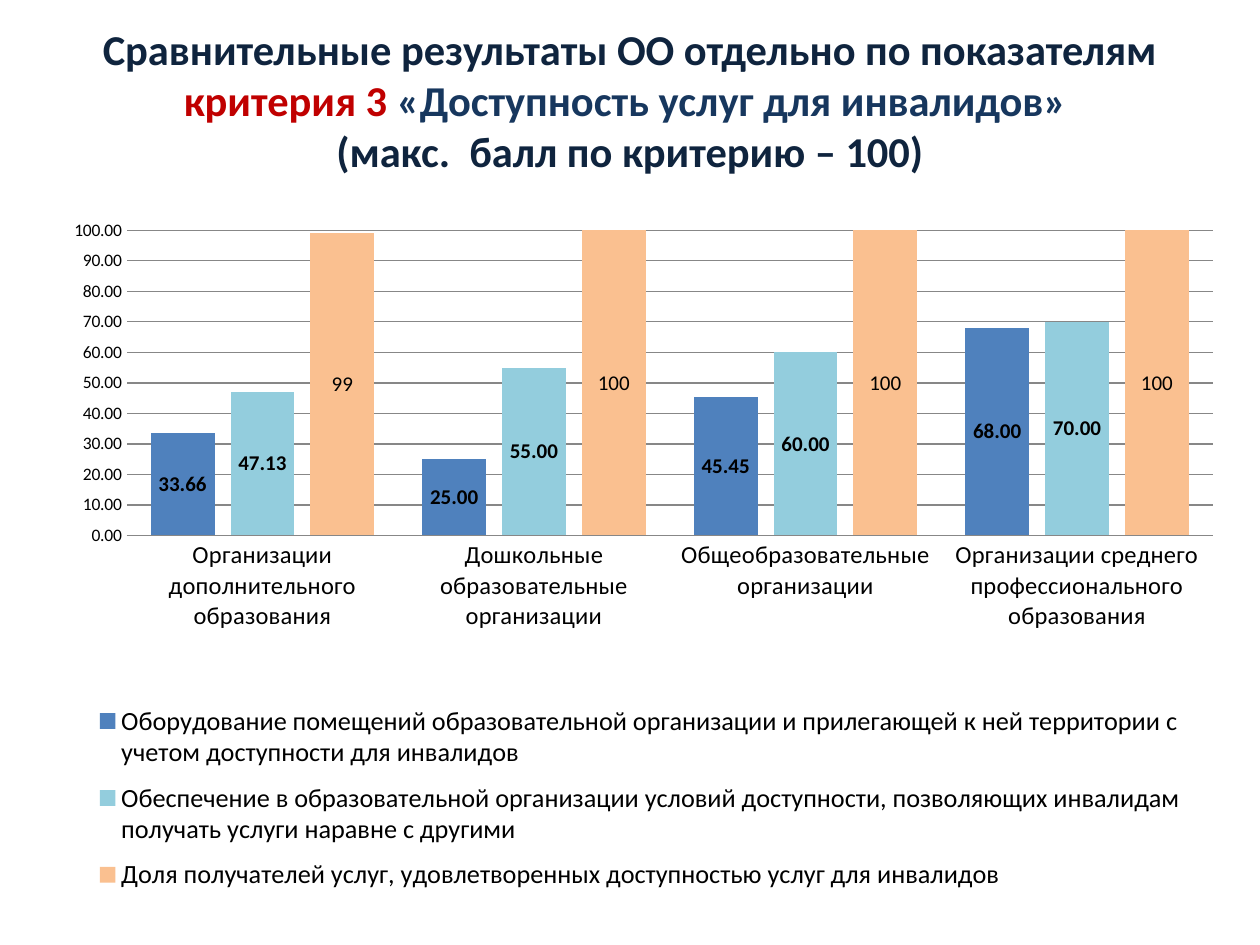
import pptx
import pptx.util
import pptx.chart.data
import pptx.dml.color
import pptx.enum.chart
import pptx.enum.text
import pptx.oxml
import pptx.oxml.ns
from dataclasses import dataclass

Pt = pptx.util.Pt
RGB = pptx.dml.color.RGBColor.from_string
qn = pptx.oxml.ns.qn


@dataclass(frozen=True)
class Theme:
    font: str = "Calibri"
    black: str = "000000"
    navy: str = "0F243E"
    blue: str = "17375E"
    red: str = "C00000"
    grid: str = "878787"
    bars: tuple = ("4F81BD", "93CDDD", "FAC090")
    title: float = 24.3
    scale: float = 10
    label: float = 12
    group: float = 14
    key: float = 15
    number: str = "0.00;[Red]0.00"


class Deck:
    def __init__(self, theme):
        self.theme = theme
        self.file = pptx.Presentation()
        self.file.slide_width, self.file.slide_height = Pt(720), Pt(540)
        self.slide = self.file.slides.add_slide(self.file.slide_layouts[6])

    def style(self, font, size, color, bold=False):
        font.name, font.size, font.bold = self.theme.font, Pt(size), bold
        font.color.rgb = RGB(color)

    def title(self, box, lines):
        frame = self.slide.shapes.add_textbox(*map(Pt, box)).text_frame
        frame.word_wrap = True
        frame.vertical_anchor = pptx.enum.text.MSO_ANCHOR.MIDDLE
        para = frame.paragraphs[0]
        para.alignment = pptx.enum.text.PP_ALIGN.CENTER
        for row, line in enumerate(lines):
            if row:
                para.add_line_break()
            for text, color in line:
                run = para.add_run()
                run.text = text
                self.style(run.font, self.theme.title, color, True)

    def layout(self, part, spot, inner=False):
        """Place a chart part by fractions of the chart area."""
        old = part.find(qn("c:layout"))
        if old is not None:
            part.remove(old)
        target = '<c:layoutTarget val="inner"/>' if inner else ""
        modes = '<c:xMode val="edge"/><c:yMode val="edge"/>'
        sizes = "".join(f'<c:{n} val="{v}"/>' for n, v in zip("xywh", spot))
        node = pptx.oxml.parse_xml(
            f'<c:layout {pptx.oxml.ns.nsdecls("c")}><c:manualLayout>'
            f"{target}{modes}{sizes}</c:manualLayout></c:layout>")
        part.insert(0 if inner else 1, node)

    def chart(self, box, groups, series, plot_spot, key_spot):
        look, enum = self.theme, pptx.enum.chart
        data = pptx.chart.data.CategoryChartData(number_format=look.number)
        data.categories = groups
        for name, values, *_ in series:
            data.add_series(name, values)
        chart = self.slide.shapes.add_chart(
            enum.XL_CHART_TYPE.COLUMN_CLUSTERED, *map(Pt, box), data).chart
        chart.has_title = False
        self.style(chart.font, look.scale, look.black)

        # Axes
        cat, val = chart.category_axis, chart.value_axis
        for axis, size in ((cat, look.group), (val, look.scale)):
            axis.major_tick_mark = enum.XL_TICK_MARK.NONE
            axis.minor_tick_mark = enum.XL_TICK_MARK.NONE
            self.style(axis.tick_labels.font, size, look.black)
        cat.format.line.color.rgb = RGB(look.grid)
        val.format.line.fill.background()
        val.minimum_scale, val.maximum_scale, val.major_unit = 0, 100, 10
        val.has_major_gridlines = True
        val.major_gridlines.format.line.color.rgb = RGB(look.grid)
        val.tick_labels.number_format = look.number
        val.tick_labels.number_format_is_linked = False

        # Columns and their labels
        plot = chart.plots[0]
        plot.gap_width, plot.overlap = 75, -25
        plot.vary_by_categories = False
        for bar, color, (_, _, form, bold) in zip(plot.series, look.bars, series):
            bar.format.fill.solid()
            bar.format.fill.fore_color.rgb = RGB(color)
            bar.invert_if_negative = False
            label = bar.data_labels
            label.show_value = True
            label.position = enum.XL_LABEL_POSITION.CENTER
            label.number_format = form
            label.number_format_is_linked = False
            self.style(label.font, look.label, look.black, bold)

        # Legend
        chart.has_legend = True
        chart.legend.position = enum.XL_LEGEND_POSITION.BOTTOM
        chart.legend.include_in_layout = False
        self.style(chart.legend.font, look.key, look.black)

        area = chart.element.find(qn("c:chart"))
        self.layout(area.find(qn("c:plotArea")), plot_spot, True)
        self.layout(area.find(qn("c:legend")), key_spot)


def main():
    look = Theme()
    deck = Deck(look)

    # Heading
    deck.title((0, 8, 720, 98), [
        [("Сравнительные результаты ОО отдельно по показателям", look.navy)],
        [("критерия 3 ", look.red),
         ("«Доступность услуг для инвалидов» ", look.blue)],
        [("(макс.  балл по критерию – 100)", look.navy)],
    ])

    # Scores by kind of organisation
    groups = ["Организации дополнительного образования",
              "Дошкольные образовательные организации",
              "Общеобразовательные организации",
              "Организации среднего профессионального образования"]
    series = [
        ("Оборудование помещений образовательной организации и прилегающей "
         "к ней территории с учетом доступности для инвалидов",
         (33.66, 25, 45.45, 68), look.number, True),
        ("Обеспечение в образовательной организации условий доступности, "
         "позволяющих инвалидам получать услуги наравне с другими",
         (47.13, 55, 60, 70), look.number, True),
        ("Доля получателей услуг, удовлетворенных доступностью услуг "
         "для инвалидов",
         (99, 100, 100, 100), "0", False),
    ]
    deck.chart((25.2, 119.5, 674.6, 405.4), groups, series,
               (0.07, 0.03, 0.92, 0.43), (0.03, 0.68, 0.95, 0.3))

    deck.file.save("out.pptx")


if __name__ == "__main__":
    main()
